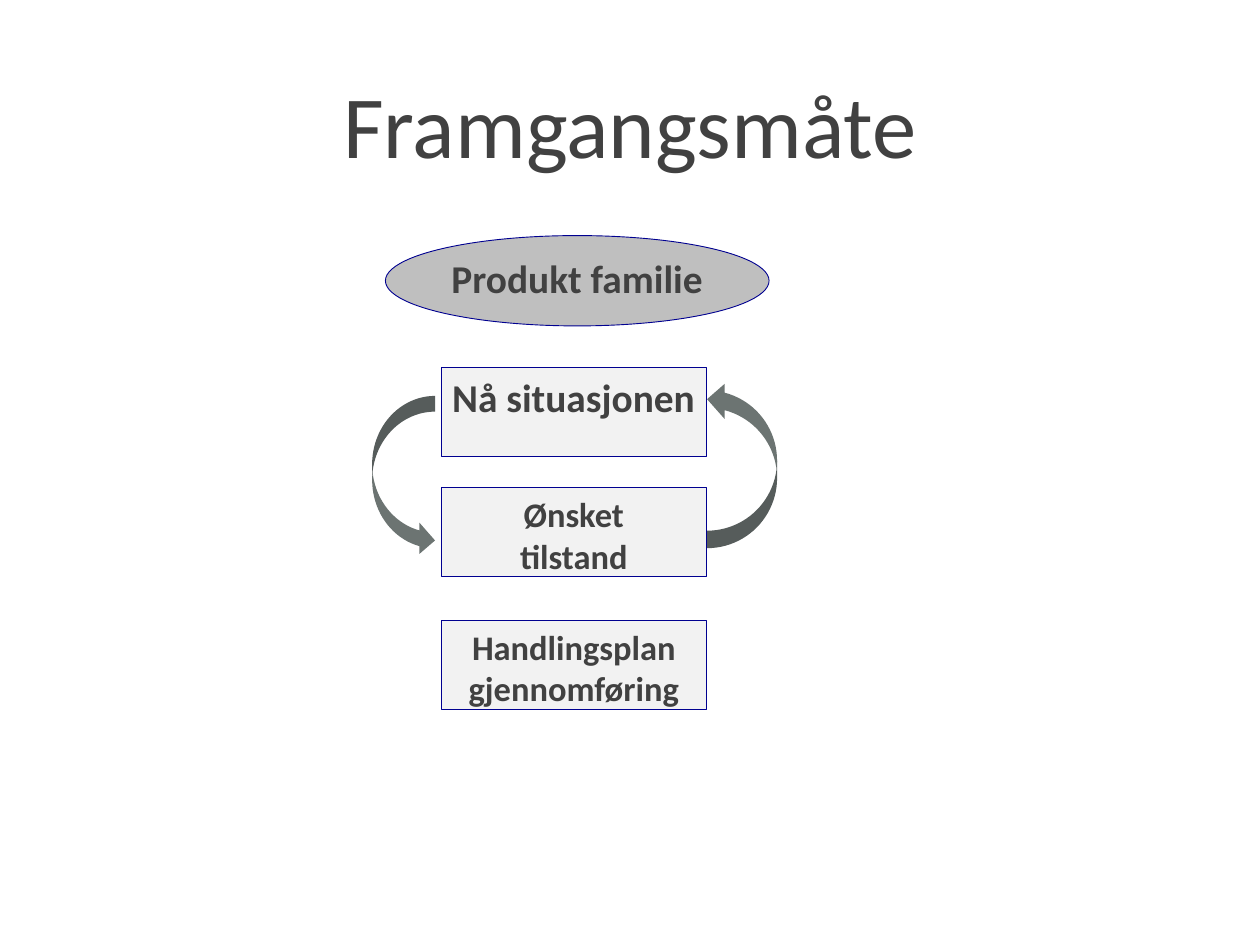
from dataclasses import dataclass

import pptx
import pptx.dml.color
import pptx.enum.shapes
import pptx.enum.text
import pptx.shapes.autoshape
import pptx.slide
import pptx.util

Inches = pptx.util.Inches
RGBColor = pptx.dml.color.RGBColor
MSO_SHAPE = pptx.enum.shapes.MSO_SHAPE
MSO_ANCHOR = pptx.enum.text.MSO_ANCHOR

TEXT_GREY = RGBColor(0x41, 0x41, 0x41)
OVAL_GREY = RGBColor(0xBF, 0xBF, 0xBF)
BOX_GREY = RGBColor(0xF2, 0xF2, 0xF2)
ARROW_GREY = RGBColor(0x6C, 0x74, 0x72)
OUTLINE_BLUE = RGBColor(0x00, 0x00, 0x90)
FONT = "Calibri"
INSET = 0.06


@dataclass
class Step:
    text: str
    left: float
    top: float
    width: float
    height: float
    size: int
    fill: RGBColor = BOX_GREY
    kind: MSO_SHAPE = MSO_SHAPE.RECTANGLE


@dataclass
class LoopArrow:
    left: float
    top: float
    width: float
    height: float
    flip: str


BOX_LEFT, BOX_WIDTH, BOX_HEIGHT = 4.98, 2.99, 1

STEPS = [
    Step("Produkt familie", 4.35, 2.66, 4.33, 1.02, 32, OVAL_GREY, MSO_SHAPE.OVAL),
    Step("Nå situasjonen", BOX_LEFT, 4.15, BOX_WIDTH, BOX_HEIGHT, 32),
    Step("Ønsket\ntilstand", BOX_LEFT, 5.51, BOX_WIDTH, BOX_HEIGHT, 28),
    Step("Handlingsplan\ngjennomføring", BOX_LEFT, 7.01, BOX_WIDTH, BOX_HEIGHT, 28),
]

ARROWS = [
    LoopArrow(4.2, 4.47, 0.71, 1.81, "flipH"),
    LoopArrow(7.98, 4.31, 0.79, 1.88, "flipV"),
]


def set_text(sp: pptx.shapes.autoshape.Shape, text: str, size: int,
             anchor: MSO_ANCHOR, bold: bool) -> None:
    tf = sp.text_frame
    tf.text = text
    tf.word_wrap = True
    tf.vertical_anchor = anchor
    tf.margin_left = tf.margin_right = Inches(INSET)
    tf.margin_top = tf.margin_bottom = Inches(INSET)
    for p in tf.paragraphs:
        p.alignment = pptx.enum.text.PP_ALIGN.CENTER
        for r in p.runs:
            r.font.name = FONT
            r.font.size = pptx.util.Pt(size)
            r.font.bold = bold
            r.font.color.rgb = TEXT_GREY


def add_filled(s: pptx.slide.Slide, kind: MSO_SHAPE, item: Step | LoopArrow,
               fill: RGBColor) -> pptx.shapes.autoshape.Shape:
    sp = s.shapes.add_shape(kind, Inches(item.left), Inches(item.top),
                            Inches(item.width), Inches(item.height))
    sp.shadow.inherit = False
    sp.fill.solid()
    sp.fill.fore_color.rgb = fill
    return sp


def add_step(s: pptx.slide.Slide, step: Step) -> None:
    sp = add_filled(s, step.kind, step, step.fill)
    sp.line.color.rgb = OUTLINE_BLUE
    sp.line.width = pptx.util.Pt(0.75)
    set_text(sp, step.text, step.size, MSO_ANCHOR.TOP, bold=True)


def add_loop_arrow(s: pptx.slide.Slide, arrow: LoopArrow) -> None:
    sp = add_filled(s, MSO_SHAPE.CURVED_LEFT_ARROW, arrow, ARROW_GREY)
    sp.line.fill.background()
    sp.element.spPr.xfrm.set(arrow.flip, "1")


def main() -> None:
    prs = pptx.Presentation()
    prs.slide_width = Inches(14.22)
    prs.slide_height = Inches(10.67)
    s = prs.slides.add_slide(prs.slide_layouts[6])

    title = s.shapes.add_textbox(Inches(0.39), Inches(0.06), Inches(13.44), Inches(2.67))
    set_text(title, "Framgangsmåte", 72, MSO_ANCHOR.MIDDLE, bold=False)
    for step in STEPS:
        add_step(s, step)
    for arrow in ARROWS:
        add_loop_arrow(s, arrow)

    prs.save("out.pptx")


if __name__ == "__main__":
    main()
